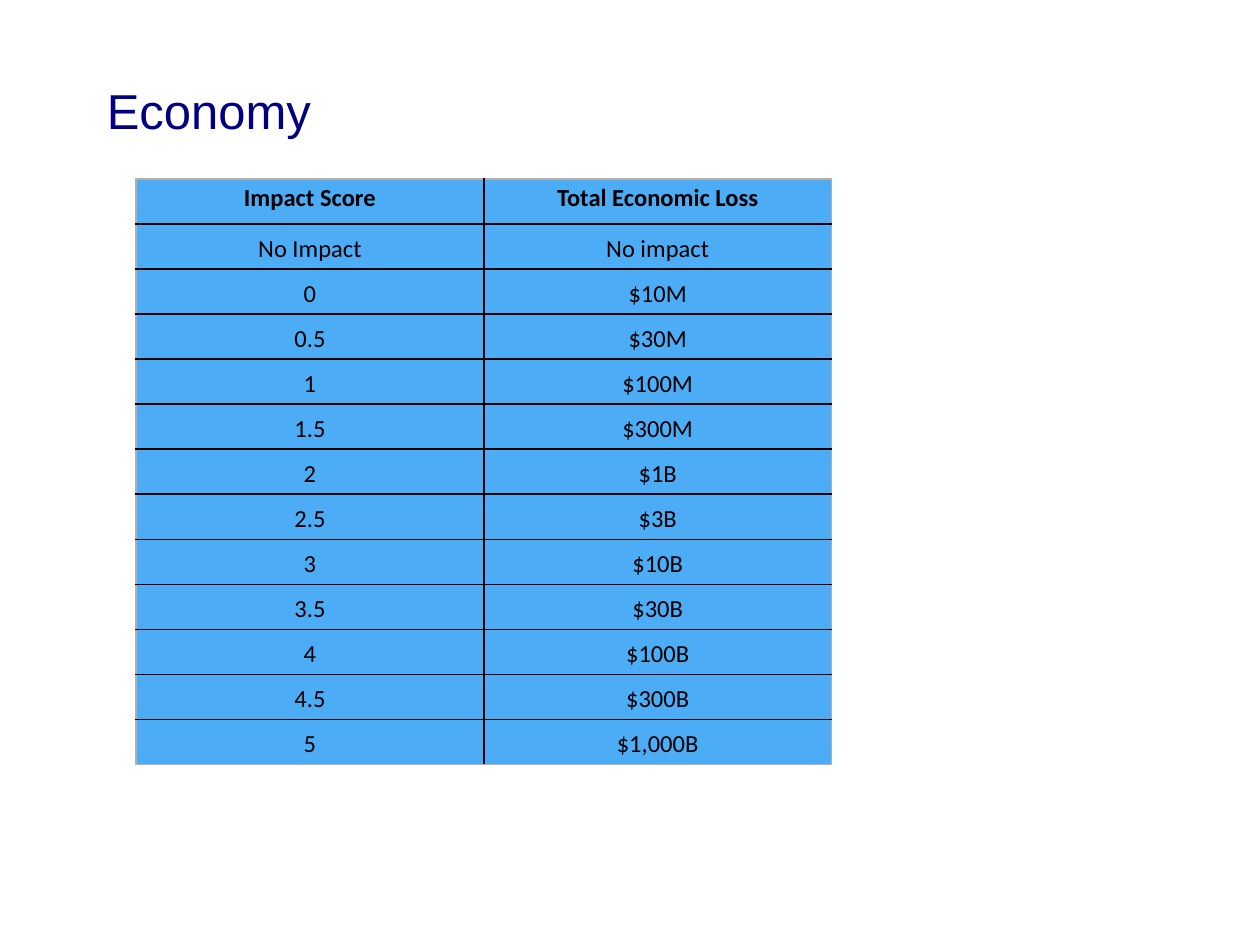
from dataclasses import dataclass

from lxml.etree import SubElement
from pptx import Presentation
from pptx.dml.color import RGBColor
from pptx.enum.text import MSO_ANCHOR, PP_ALIGN
from pptx.oxml.ns import qn
from pptx.util import Inches, Pt


@dataclass(frozen=True)
class Theme:
    title_color: str = "000080"
    text_color: str = "000000"
    cell_fill: str = "008AF2"
    fill_alpha: int = 70
    inner_line: str = "000000"
    outer_line: str = "B0B0B0"
    line_width: float = 1
    title_font: str = "Arial"
    table_font: str = "Calibri"
    title_size: int = 28
    table_size: int = 14


@dataclass(frozen=True)
class ImpactRow:
    score: str
    loss: str


THEME = Theme()
HEADER = ImpactRow("Impact Score", "Total Economic Loss")
ROWS = [
    ImpactRow("No Impact", "No impact"),
    ImpactRow("0", "$10M"),
    ImpactRow("0.5", "$30M"),
    ImpactRow("1", "$100M"),
    ImpactRow("1.5", "$300M"),
    ImpactRow("2", "$1B"),
    ImpactRow("2.5", "$3B"),
    ImpactRow("3", "$10B"),
    ImpactRow("3.5", "$30B"),
    ImpactRow("4", "$100B"),
    ImpactRow("4.5", "$300B"),
    ImpactRow("5", "$1,000B"),
]


def apply_format(target, values: dict) -> None:
    """Set each named attribute on the target."""
    for name, value in values.items():
        setattr(target, name, value)


def write_text(p, text: str, font: str, size: int, color: str, bold: bool = False) -> None:
    """Add one formatted run to a paragraph."""
    r = p.add_run()
    r.text = text
    apply_format(r.font, {"name": font, "size": Pt(size), "bold": bold})
    r.font.color.rgb = RGBColor.from_string(color)


def add_title(s, text: str) -> None:
    """Place the slide title."""
    sp = s.shapes.add_textbox(Inches(0.75), Inches(0.25), Inches(8.5), Inches(1.25))
    tf = sp.text_frame
    apply_format(tf, {"word_wrap": True, "vertical_anchor": MSO_ANCHOR.MIDDLE})
    write_text(tf.paragraphs[0], text, THEME.title_font, THEME.title_size, THEME.title_color)


def set_borders(cell, outer: dict[str, bool]) -> None:
    """Draw the four cell borders, lighter on the table's outer edge."""
    tc_pr = cell._tc.get_or_add_tcPr()
    for side, is_outer in outer.items():
        ln = SubElement(tc_pr, qn(f"a:ln{side}"), w=str(Pt(THEME.line_width)))
        fill = SubElement(ln, qn("a:solidFill"))
        color = THEME.outer_line if is_outer else THEME.inner_line
        SubElement(fill, qn("a:srgbClr"), val=color)


def set_fill(cell) -> None:
    """Give a cell the translucent table fill."""
    cell.fill.solid()
    cell.fill.fore_color.rgb = RGBColor.from_string(THEME.cell_fill)
    color = cell._tc.tcPr.find(qn("a:solidFill")).find(qn("a:srgbClr"))
    SubElement(color, qn("a:alpha"), val=str(THEME.fill_alpha * 1000))


def add_impact_table(s, rows: list[ImpactRow]) -> None:
    """Place the table of impact scores and losses."""
    row_height = Inches(4.65) // len(rows)
    table = s.shapes.add_table(
        len(rows), 2, Inches(1.08), Inches(1.42), Inches(5.52), row_height * len(rows)
    ).table
    apply_format(table, {"first_row": False, "horz_banding": False})
    for i, row in enumerate(rows):
        table.rows[i].height = row_height
        for j, text in enumerate((row.score, row.loss)):
            cell = table.cell(i, j)
            apply_format(cell, {
                "margin_left": Inches(0.08), "margin_right": Inches(0.08),
                "margin_top": 0, "margin_bottom": 0,
                "vertical_anchor": MSO_ANCHOR.MIDDLE if i else MSO_ANCHOR.TOP,
            })
            set_borders(cell, {"L": j == 0, "R": j == 1, "T": i == 0, "B": i == len(rows) - 1})
            set_fill(cell)
            p = cell.text_frame.paragraphs[0]
            apply_format(p, {"alignment": PP_ALIGN.CENTER, "line_spacing": 1.15})
            write_text(p, text, THEME.table_font, THEME.table_size, THEME.text_color, i == 0)


def main() -> None:
    """Build and save the slide."""
    prs = Presentation()
    apply_format(prs, {"slide_width": Inches(10), "slide_height": Inches(7.5)})
    s = prs.slides.add_slide(prs.slide_layouts[6])
    add_title(s, "Economy")
    add_impact_table(s, [HEADER, *ROWS])
    prs.save("out.pptx")


if __name__ == "__main__":
    main()
